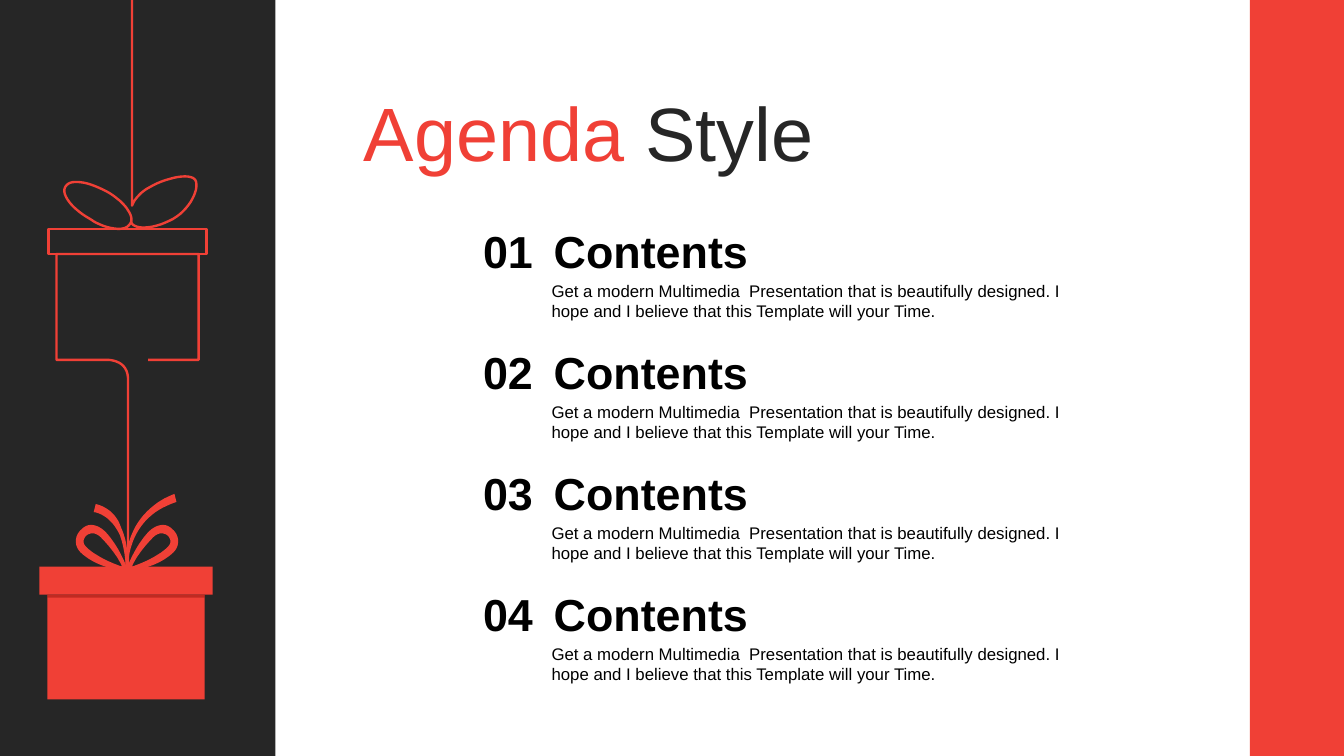
from pptx import Presentation
from pptx import util as u
from pptx.dml.color import RGBColor
from pptx.enum import shapes, text
from pptx.oxml import parse_xml
from pptx.oxml.ns import nsdecls

HUES = {"red": "F04036", "dark": "262626", "black": "000000", "shade": "89110A"}
FONT = "Arial"
TITLE = [("Agenda", "red"), (" Style", "dark")]
BLURB = ("Get a modern Multimedia  Presentation that is beautifully designed. "
         "I hope and I believe that this Template will your Time.")
ITEMS = [(num, "Contents", BLURB) for num in ("01", "02", "03", "04")]

WIDE, HIGH = 13.33, 7.5
PANEL, BAND = WIDE * 0.205, WIDE * 0.07
NUM_X, HEAD_X = WIDE / 3, WIDE * 0.403
TOP, STEP = HIGH * 0.29, HIGH * 0.16
HEAD_H, NOTE_H, NOTE_DY = 0.64, 0.5, 0.56
NUM_W, TEXT_W = 1.19, 5.58
LINE, AXIS, SCALE = 1.7, 1.26, 1000

LID = (0.48, 2.27, 1.57, 0.25)
CORD = [[(1.47, 3.57), (1.97, 3.57), (1.97, 2.52), (0.56, 2.52), (0.56, 3.57),
         (1.05, 3.57), (1.06, 3.57, 1.26, 3.56, 1.27, 3.75), (1.27, 5.86)]]
LEAF = [[(1.18, 2.27), (1.1, 2.27, 0.99, 2.24, 0.89, 2.17),
         (0.71, 2.07, 0.6, 1.92, 0.65, 1.85),
         (0.7, 1.77, 0.87, 1.8, 1.06, 1.9),
         (1.13, 1.94, 1.21, 2, 1.26, 2.07),
         (1.3, 2.13, 1.32, 2.18, 1.29, 2.22),
         (1.27, 2.25, 1.24, 2.27, 1.18, 2.27)]]
STRING = [[(1.31, 0), (1.31, 2.04), (1.34, 1.96, 1.42, 1.89, 1.48, 1.86),
           (1.65, 1.76, 1.9, 1.71, 1.94, 1.79),
           (1.98, 1.87, 1.89, 2.07, 1.72, 2.17),
           (1.54, 2.27, 1.36, 2.28, 1.31, 2.22), (1.3, 2.2)]]
LOOP = [[(1.25, 5.66), (1.29, 5.55, 1.36, 5.4, 1.47, 5.28),
         (1.55, 5.2, 1.64, 5.18, 1.71, 5.25),
         (1.78, 5.31, 1.79, 5.41, 1.72, 5.48),
         (1.62, 5.58, 1.42, 5.66, 1.25, 5.66)],
        [(1.31, 5.62), (1.34, 5.54, 1.43, 5.42, 1.52, 5.33),
         (1.57, 5.28, 1.63, 5.28, 1.67, 5.32),
         (1.7, 5.36, 1.7, 5.39, 1.66, 5.43),
         (1.58, 5.51, 1.41, 5.59, 1.31, 5.62)]]
LONG = [[(1.25, 5.71), (1.23, 5.55, 1.26, 5.38, 1.34, 5.23),
         (1.43, 5.07, 1.57, 4.96, 1.73, 4.9), (1.75, 4.98),
         (1.6, 5.03, 1.47, 5.11, 1.38, 5.25),
         (1.29, 5.39, 1.26, 5.55, 1.27, 5.71)]]
SHORT = [[(1.25, 5.69), (1.25, 5.56, 1.23, 5.42, 1.19, 5.31),
          (1.14, 5.2, 1.05, 5.1, 0.93, 5.08), (0.95, 5),
          (1.07, 5.03, 1.16, 5.11, 1.2, 5.23),
          (1.26, 5.36, 1.28, 5.52, 1.26, 5.69)]]
GIFT = [((0.39, 5.62, 1.72, 0.28), "red"), ((0.47, 5.9, 1.56, 1.04), "red"),
        ((0.47, 5.9, 1.56, 0.03), "shade")]


def color(name):
    return RGBColor.from_string(HUES[name])


def inches(box):
    return [u.Inches(side) for side in box]


def paint(shape, fill=None, line=None):
    shape.shadow.inherit = False
    if fill:
        shape.fill.solid()
        shape.fill.fore_color.rgb = color(fill)
    else:
        shape.fill.background()
    if line:
        shape.line.color.rgb = color(line)
        shape.line.width = u.Pt(LINE)
    else:
        shape.line.fill.background()
    return shape


def block(slide, box, fill=None, line=None):
    shape = slide.shapes.add_shape(shapes.MSO_SHAPE.RECTANGLE, *inches(box))
    return paint(shape, fill, line)


def trace(steps, count=14):
    dots = [steps[0]]
    for step in steps[1:]:
        if len(step) == 2:
            dots.append(step)
            continue
        curve = [dots[-1], step[:2], step[2:4], step[4:]]
        for i in range(1, count + 1):
            t = i / count
            parts = ((1 - t) ** 3, 3 * t * (1 - t) ** 2, 3 * t * t * (1 - t), t ** 3)
            dots.append(tuple(sum(w * dot[k] for w, dot in zip(parts, curve))
                              for k in (0, 1)))
    return dots


def draw(slide, rings, fill=None, line=None, flip=False):
    form = None
    for ring in rings:
        dots = [((2 * AXIS - x if flip else x) * SCALE, y * SCALE)
                for x, y in trace(ring)]
        if form is None:
            form = slide.shapes.build_freeform(*dots[0], scale=u.Inches(1) / SCALE)
        else:
            form.move_to(*dots[0])
        form.add_line_segments(dots[1:], close=bool(fill))
    return paint(form.convert_to_shape(), fill, line)


def add_run(para, words, size, hue, bold=False):
    run = para.add_run()
    run.text = words
    run.font.name, run.font.size, run.font.bold = FONT, u.Pt(size), bold
    run.font.color.rgb = color(hue)


def label(slide, box, words, size, bold=False, pad=0.1, align=text.PP_ALIGN.LEFT):
    frame = slide.shapes.add_textbox(*inches(box)).text_frame
    frame.word_wrap = True
    frame.margin_left = frame.margin_right = u.Inches(pad)
    para = frame.paragraphs[0]
    para.alignment = align
    add_run(para, words, size, "black", bold)


def main():
    deck = Presentation()
    deck.slide_width, deck.slide_height = u.Inches(WIDE), u.Inches(HIGH)
    slide = deck.slides.add_slide(deck.slide_layouts[5])

    block(slide, (0, 0, PANEL, HIGH), "dark")
    block(slide, (WIDE - BAND, 0, BAND, HIGH), "red")

    title = slide.shapes.title
    title.left, title.top, title.width, title.height = inches((3.51, 0.8, 9.82, 1.01))
    frame = title.text_frame
    frame.auto_size = text.MSO_AUTO_SIZE.NONE
    frame.vertical_anchor = text.MSO_ANCHOR.MIDDLE
    frame.paragraphs[0].alignment = text.PP_ALIGN.LEFT
    for words, hue in TITLE:
        add_run(frame.paragraphs[0], words, 54, hue)

    block(slide, LID, line="red")
    for rings in (CORD, LEAF, STRING):
        draw(slide, rings, line="red")
    for flip in (False, True):
        draw(slide, LOOP, fill="red", flip=flip)
    for rings in (LONG, SHORT):
        draw(slide, rings, fill="red")
    for box, hue in GIFT:
        part = block(slide, box, hue)
    tint = part.fill._xPr.find(".//{*}srgbClr")
    tint.append(parse_xml('<a:alpha %s val="46000"/>' % nsdecls("a")))

    for row, (num, head, note) in enumerate(ITEMS):
        y = TOP + row * STEP
        label(slide, (HEAD_X, y + NOTE_DY, TEXT_W, NOTE_H), note, 12)
        label(slide, (HEAD_X, y, TEXT_W, HEAD_H), head, 32, True, 0.12)
        label(slide, (NUM_X, y, NUM_W, HEAD_H), num, 32, True, 0.12,
              text.PP_ALIGN.CENTER)

    deck.save("out.pptx")


if __name__ == "__main__":
    main()
